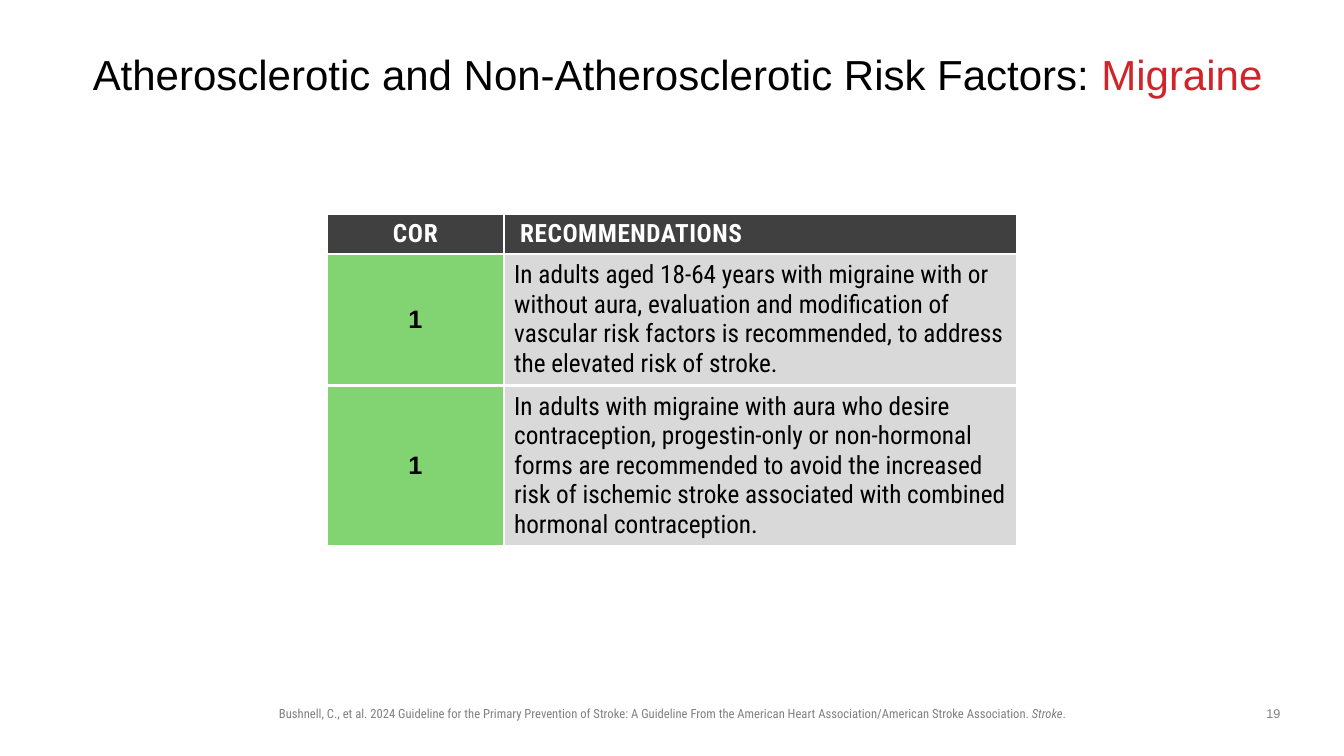
"""Build the migraine recommendations slide."""
import dataclasses

import lxml.etree
import pptx
import pptx.dml.color
import pptx.enum.text
import pptx.oxml.ns
import pptx.util

Inches = pptx.util.Inches
Pt = pptx.util.Pt
Align = pptx.enum.text.PP_ALIGN
Anchor = pptx.enum.text.MSO_ANCHOR
AutoSize = pptx.enum.text.MSO_AUTO_SIZE
qn = pptx.oxml.ns.qn


@dataclasses.dataclass(frozen=True)
class Theme:
    sans: str = "Arial"
    condensed: str = "Roboto Condensed"
    black: str = "000000"
    white: str = "FFFFFF"
    red: str = "CF2429"
    gray: str = "808080"
    header: str = "404040"
    green: str = "82D472"
    panel: str = "D9D9D9"
    title_size: int = 30
    table_size: int = 18
    note_size: int = 9
    border_width: float = 2.25


class SlideBuilder:
    def __init__(self, prs, theme):
        self.theme = theme
        self.slide = prs.slides.add_slide(prs.slide_layouts[5])

    def style(self, font, name, size, color, bold=False):
        font.name = name
        font.size = Pt(size)
        font.bold = bold
        font.color.rgb = pptx.dml.color.RGBColor.from_string(color)

    def title(self, text, accent, left, top, width, height):
        t = self.theme
        sp = self.slide.shapes.title
        sp.left, sp.top = Inches(left), Inches(top)
        sp.width, sp.height = Inches(width), Inches(height)
        tf = sp.text_frame
        tf.auto_size = AutoSize.NONE
        tf.vertical_anchor = Anchor.MIDDLE
        tf.margin_left = tf.margin_right = tf.margin_top = tf.margin_bottom = 0
        p = tf.paragraphs[0]
        p.alignment = Align.LEFT
        p.line_spacing = 0.9
        for words, color in ((text, t.black), (accent, t.red)):
            r = p.add_run()
            r.text = words
            self.style(r.font, t.sans, t.title_size, color)

    def note(self, runs, font, left, top, width, height):
        sp = self.slide.shapes.add_textbox(
            Inches(left), Inches(top), Inches(width), Inches(height))
        tf = sp.text_frame
        tf.word_wrap = True
        p = tf.paragraphs[0]
        p.alignment = Align.CENTER
        self.style(p.font, font, self.theme.note_size, self.theme.gray)
        for text, italic in runs:
            r = p.add_run()
            r.text = text
            self.style(r.font, font, self.theme.note_size, self.theme.gray)
            r.font.italic = italic

    def borders(self, cell):
        tc_pr = cell._tc.get_or_add_tcPr()
        for side in ("a:lnL", "a:lnR", "a:lnT", "a:lnB"):
            ln = lxml.etree.SubElement(
                tc_pr, qn(side), w=str(Pt(self.theme.border_width)))
            fill = lxml.etree.SubElement(ln, qn("a:solidFill"))
            lxml.etree.SubElement(fill, qn("a:srgbClr"), val=self.theme.white)

    def cell(self, cell, text, fill, font, color, bold, align, tracking=0, indent=0.0):
        self.borders(cell)
        cell.fill.solid()
        cell.fill.fore_color.rgb = pptx.dml.color.RGBColor.from_string(fill)
        cell.vertical_anchor = Anchor.MIDDLE
        cell.margin_left = Inches(0.1 + indent)
        p = cell.text_frame.paragraphs[0]
        p.alignment = align
        r = p.add_run()
        r.text = text
        self.style(r.font, font, self.theme.table_size, color, bold)
        if tracking:
            r._r.get_or_add_rPr().set("spc", str(tracking))

    def table(self, headings, rows, left, top, widths, heights):
        t = self.theme
        table = self.slide.shapes.add_table(
            len(heights), len(widths), Inches(left), Inches(top),
            Inches(sum(widths)), Inches(sum(heights))).table
        table.first_row = table.horz_banding = False
        for column, width in zip(table.columns, widths):
            column.width = Inches(width)
        for row, height in zip(table.rows, heights):
            row.height = Inches(height)
        cor, recommendations = headings
        self.cell(table.cell(0, 0), cor, t.header, t.condensed, t.white, True,
                  Align.CENTER, 50)
        self.cell(table.cell(0, 1), recommendations, t.header, t.condensed,
                  t.white, True, Align.LEFT, 40, 0.06)
        for i, (grade, advice) in enumerate(rows, 1):
            self.cell(table.cell(i, 0), grade, t.green, t.sans, t.black, True,
                      Align.CENTER)
            self.cell(table.cell(i, 1), advice, t.panel, t.condensed, t.black,
                      False, Align.LEFT)


def main():
    prs = pptx.Presentation()
    prs.slide_width, prs.slide_height = Inches(13.33), Inches(7.5)
    theme = Theme()
    s = SlideBuilder(prs, theme)
    s.note([
        ("Bushnell, C., et al. 2024 Guideline for the Primary Prevention of Stroke: "
         "A Guideline From the American Heart Association/American Stroke Association. ", False),
        ("Stroke", True),
        (".", False),
    ], theme.condensed, 2.36, 6.95, 8.62, 0.25)
    s.title("Atherosclerotic and Non-Atherosclerotic Risk Factors: ", "Migraine",
            0.92, 0.4, 11.7, 0.72)
    s.table(("COR", "RECOMMENDATIONS"), [
        ("1", "In adults aged 18-64 years with migraine with or without aura, evaluation "
              "and modification of vascular risk factors is recommended, to address the "
              "elevated risk of stroke."),
        ("1", "In adults with migraine with aura who desire contraception, progestin-only "
              "or non-hormonal forms are recommended to avoid the increased risk of "
              "ischemic stroke associated with combined hormonal contraception."),
    ], 3.24, 2.12, (1.76, 5.09), (0.38, 1.27, 1.56))
    s.note([("19", False)], theme.sans, 12.42, 6.95, 0.42, 0.26)
    prs.save("out.pptx")


if __name__ == "__main__":
    main()
